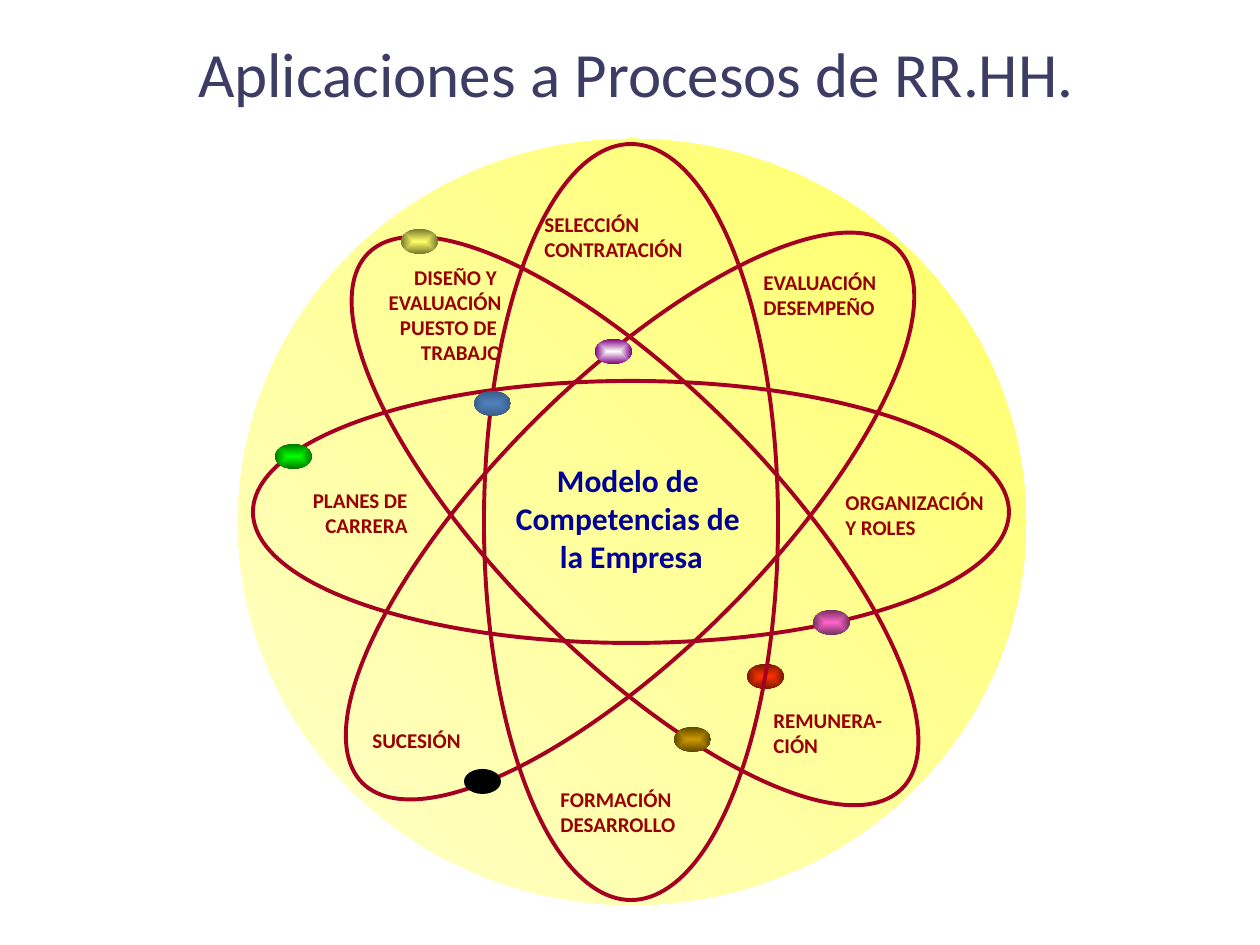
"""Build the slide of HR processes orbiting the company's competency model."""
from pptx import Presentation
from pptx.dml.color import RGBColor
from pptx.enum.shapes import MSO_SHAPE
from pptx.enum.text import MSO_ANCHOR, MSO_AUTO_SIZE, PP_ALIGN
from pptx.oxml import parse_xml
from pptx.oxml.ns import nsdecls, qn
from pptx.util import Pt

PX = 914400 / 126
LEFT, CENTER, RIGHT = PP_ALIGN.LEFT, PP_ALIGN.CENTER, PP_ALIGN.RIGHT
RADIAL = (
    f'<a:path {nsdecls("a")} path="shape">'
    '<a:fillToRect l="50000" t="50000" r="50000" b="50000"/></a:path>'
)


def paint(color, value):
    color.rgb = RGBColor.from_string(value)


def add_oval(box, fills=(), turn=0):
    oval = slide.shapes.add_shape(MSO_SHAPE.OVAL, *(round(n * PX) for n in box))
    oval.shadow.inherit = False
    oval.rotation = turn
    if len(fills) == 2:
        oval.fill.gradient()
        for stop, value in zip(oval.fill.gradient_stops, fills):
            paint(stop.color, value)
    elif fills:
        oval.fill.solid()
        paint(oval.fill.fore_color, fills[0])
    else:
        oval.fill.background()
    if fills:
        oval.line.fill.background()
    else:
        paint(oval.line.color, "A50021")
        oval.line.width = Pt(2.25)
    return oval


deck = Presentation()
deck.slide_width, deck.slide_height = round(1260 * PX), round(945 * PX)
slide = deck.slides.add_slide(deck.slide_layouts[6])

disc = add_oval((238, 139, 788, 766), ("FFFFCC", "FFFF66"))
disc.fill.gradient_angle = 45

for orbit, turn in [
    ((253, 381, 756, 262), 0),
    ((252, 381, 756, 270), 135.1),
    ((257, 386, 756, 270), 45.1),
]:
    add_oval(orbit, turn=turn)

process = {"size": Pt(12), "bold": True, "name": "Calibri"}, "990000"
model = {"size": Pt(18), "bold": True, "name": "Calibri"}, "000099"
heading = {"size": Pt(36), "bold": False, "name": "Calibri"}, "3C3C65"

for box, lines, align, (style, ink) in [
    ((761, 701, 154, 63), ["REMUNERA-", "CIÓN"], LEFT, process),
    ((548, 780, 173, 63), ["FORMACIÓN", "DESARROLLO"], LEFT, process),
    ((360, 721, 135, 38), ["SUCESIÓN"], LEFT, process),
    ((275, 481, 145, 63), ["PLANES DE", "CARRERA"], RIGHT, process),
    ((833, 483, 190, 63), ["ORGANIZACIÓN", "Y ROLES"], LEFT, process),
    ((751, 263, 164, 63), ["EVALUACIÓN", "DESEMPEÑO"], LEFT, process),
    ((532, 205, 195, 63), ["SELECCIÓN", "CONTRATACIÓN"], LEFT, process),
    ((350, 258, 164, 115),
     ["DISEÑO Y ", "EVALUACIÓN", "PUESTO DE ", "TRABAJO"], RIGHT, process),
    ((481, 455, 301, 127),
     ["Modelo de ", "Competencias de ", "la Empresa"], CENTER, model),
    ((48, 35, 1176, 74), ["Aplicaciones a Procesos de RR.HH."], CENTER, heading),
]:
    frame = slide.shapes.add_textbox(*(round(n * PX) for n in box)).text_frame
    is_heading = ink == heading[1]
    frame.word_wrap = is_heading
    frame.auto_size = MSO_AUTO_SIZE.NONE if is_heading else MSO_AUTO_SIZE.SHAPE_TO_FIT_TEXT
    frame.vertical_anchor = MSO_ANCHOR.MIDDLE if is_heading else MSO_ANCHOR.TOP
    frame.text = "\n".join(lines)
    for paragraph in frame.paragraphs:
        paragraph.alignment = align
        font = paragraph.runs[0].font
        for key, value in style.items():
            setattr(font, key, value)
        paint(font.color, ink)

for left, top, *fills in [
    (401, 229, "FFFF66", "76762F"),
    (464, 769, "000000"),
    (813, 610, "FF66CC", "762F5E"),
    (595, 339, "FEFFFF", "800080"),
    (674, 727, "CC9900", "5E4700"),
    (275, 444, "00FF00", "007600"),
    (747, 664, "FF3300", "761800"),
    (474, 391, "4F81BD", "395C87"),
]:
    if fills[0] == "4F81BD":
        add_oval((253, 375, 756, 294), turn=270)
    electron = add_oval((left, top, 37, 25), fills)
    if len(fills) == 2:
        gradient = electron._element.spPr.find(qn("a:gradFill"))
        gradient.replace(gradient.find(qn("a:lin")), parse_xml(RADIAL))

deck.save("out.pptx")
